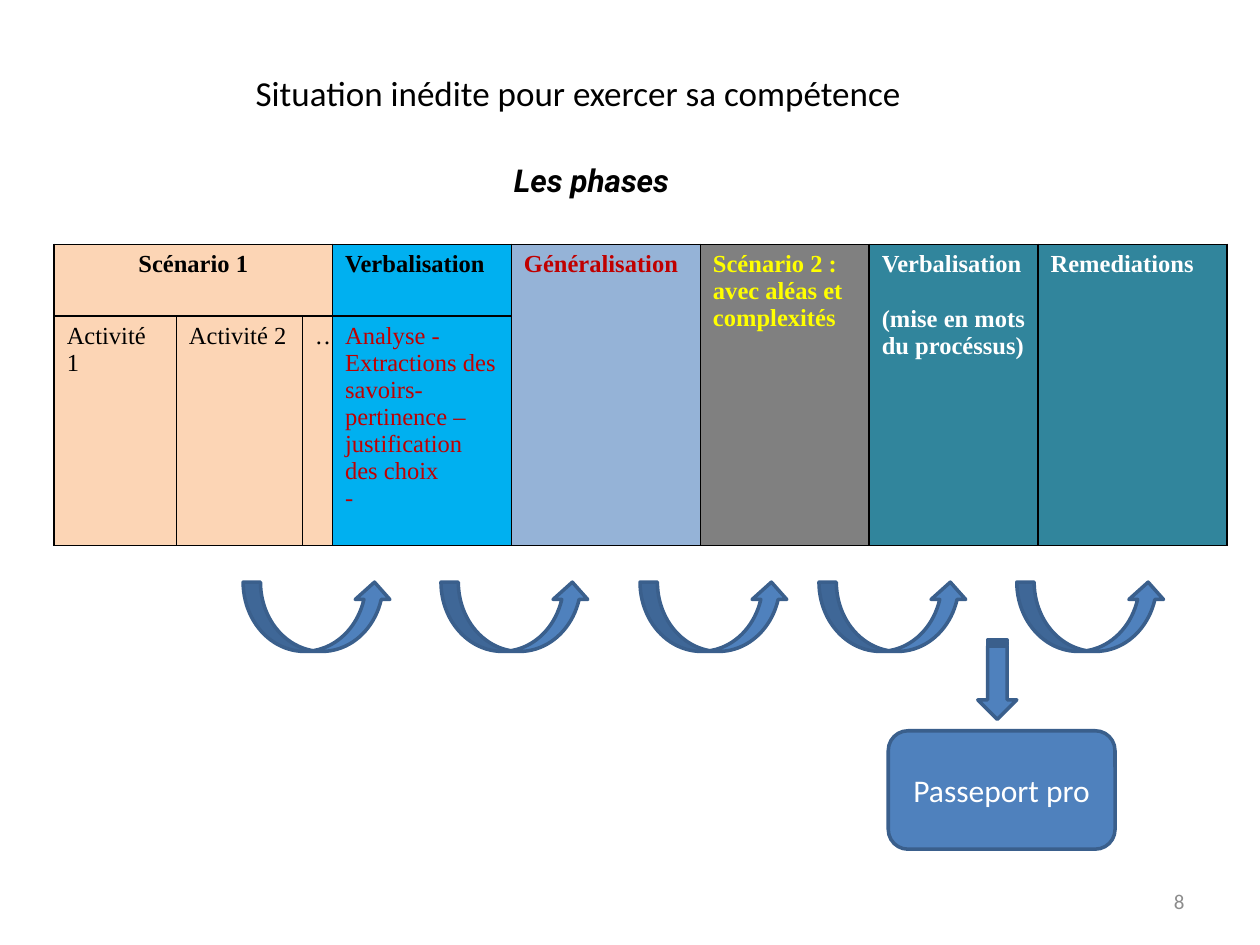
from pptx import Presentation
from pptx.dml.color import RGBColor as Rgb
from pptx.enum.shapes import MSO_SHAPE as Kind
from pptx.enum.text import MSO_ANCHOR as Anchor, PP_ALIGN as Align
from pptx.oxml import parse_xml
from pptx.oxml.ns import nsdecls
from pptx.util import Inches, Pt

COLS, ROWS = 100, 75
SERIF = "Times New Roman"
PEACH, SKY, TEAL = "FCD5B5", "00B0F0", "31859C"
BLACK, RED, WHITE = "000000", "C00000", "FFFFFF"


def tint(code):
    return Rgb.from_string(code)


class Deck:
    def __init__(self):
        self.show = Presentation()
        self.show.slide_width = Inches(10)
        self.show.slide_height = Inches(7.5)
        self.slide = self.show.slides.add_slide(self.show.slide_layouts[6])
        self.base = {"name": "Calibri", "size": Pt(18), "bold": False, "italic": False}
        self.main, self.edge = "4F81BD", "3A5F8C"

    def wide(self, cols):
        return round(self.show.slide_width * cols / COLS)

    def high(self, rows):
        return round(self.show.slide_height * rows / ROWS)

    def box(self, x, y, w, h):
        return self.wide(x), self.high(y), self.wide(w), self.high(h)

    def label(self, frame, lines, color=BLACK, align=Align.LEFT, gap=0, **style):
        for i, line in enumerate(lines):
            para = frame.add_paragraph() if i else frame.paragraphs[0]
            para.text = line
            para.alignment = align
            if i and gap:
                para.space_before = Pt(gap)
            for run in para.runs:
                run.font.color.rgb = tint(color)
                for key, value in {**self.base, **style}.items():
                    setattr(run.font, key, value)

    def text(self, area, words, wrap=True, anchor=Anchor.TOP, **style):
        frame = self.slide.shapes.add_textbox(*self.box(*area)).text_frame
        frame.word_wrap = wrap
        frame.vertical_anchor = anchor
        self.label(frame, [words], **style)

    def shape(self, kind, area, words=None, turn=0):
        item = self.slide.shapes.add_shape(kind, *self.box(*area))
        item.shadow.inherit = False
        item.rotation = turn
        item.fill.solid()
        item.fill.fore_color.rgb = tint(self.main)
        item.line.color.rgb = tint(self.edge)
        item.line.width = Pt(2)
        if words:
            item.text_frame.vertical_anchor = Anchor.MIDDLE
            self.label(item.text_frame, [words], WHITE, Align.CENTER)

    def rule(self, cell):
        props = cell._tc.get_or_add_tcPr()
        for i, side in enumerate("LRTB"):
            props.insert(i, parse_xml(
                f'<a:ln{side} {nsdecls("a")} w="12700"><a:solidFill>'
                f'<a:srgbClr val="{BLACK}"/></a:solidFill></a:ln{side}>'))

    def table(self, x, y, cols, rows, cells):
        area = self.box(x, y, sum(cols), sum(rows))
        grid = self.slide.shapes.add_table(len(rows), len(cols), *area).table
        grid.first_row = grid.horz_banding = False
        for col, size in zip(grid.columns, cols):
            col.width = self.wide(size)
        for row, size in zip(grid.rows, rows):
            row.height = self.high(size)
        for r, c, down, over, fill, lines, style in cells:
            first = grid.cell(r, c)
            if down * over > 1:
                first.merge(grid.cell(r + down - 1, c + over - 1))
            for i in range(r, r + down):
                for j in range(c, c + over):
                    cell = grid.cell(i, j)
                    cell.fill.solid()
                    cell.fill.fore_color.rgb = tint(fill)
                    self.rule(cell)
            look = {"name": SERIF, "size": Pt(14), "bold": r == 0, **style}
            self.label(first.text_frame, lines, **look)


def main():
    deck = Deck()
    deck.table(4.3, 19.4, [9.7, 10, 2.3, 14.2, 15, 13.4, 13.4, 15], [5.7, 18.2], [
        (0, 0, 1, 3, PEACH, ["Scénario 1"], {"align": Align.CENTER}),
        (0, 3, 1, 1, SKY, ["Verbalisation"], {}),
        (0, 4, 2, 1, "95B3D7", ["Généralisation"], {"color": RED}),
        (0, 5, 2, 1, "808080", ["Scénario 2 : avec aléas et complexités"],
         {"color": "FFFF00"}),
        (0, 6, 2, 1, TEAL, ["Verbalisation", "(mise en mots du procéssus)"],
         {"color": WHITE, "gap": 16}),
        (0, 7, 2, 1, TEAL, ["Remediations"], {"color": WHITE}),
        (1, 0, 1, 1, PEACH, ["Activité 1"], {}),
        (1, 1, 1, 1, PEACH, ["Activité 2"], {}),
        (1, 2, 1, 1, PEACH, ["…"], {}),
        (1, 3, 1, 1, SKY,
         ["Analyse -\vExtractions des savoirs- pertinence – justification des choix", "-"],
         {"color": RED}),
    ])
    deck.text((19.3, 5.2, 57.5, 4.4), "Situation inédite pour exercer sa compétence",
              size=Pt(20))
    deck.text((39.8, 12.3, 14.8, 4), "Les phases", wrap=False,
              name="Roboto", bold=True, italic=True)
    for x in (19.3, 35, 50.8, 65, 80.7):
        deck.shape(Kind.CURVED_UP_ARROW, (x, 46.2, 11.8, 5.5))
    deck.shape(Kind.STRIPED_RIGHT_ARROW, (76, 52.4, 6.3, 3.1), turn=90)
    deck.shape(Kind.ROUNDED_RECTANGLE, (70.5, 58, 18, 9.4), "Passeport pro")
    deck.text((71.7, 69.5, 23.3, 4), "8", anchor=Anchor.MIDDLE,
              color="8C8C8C", align=Align.RIGHT, size=Pt(12))
    deck.show.save("out.pptx")


if __name__ == "__main__":
    main()
